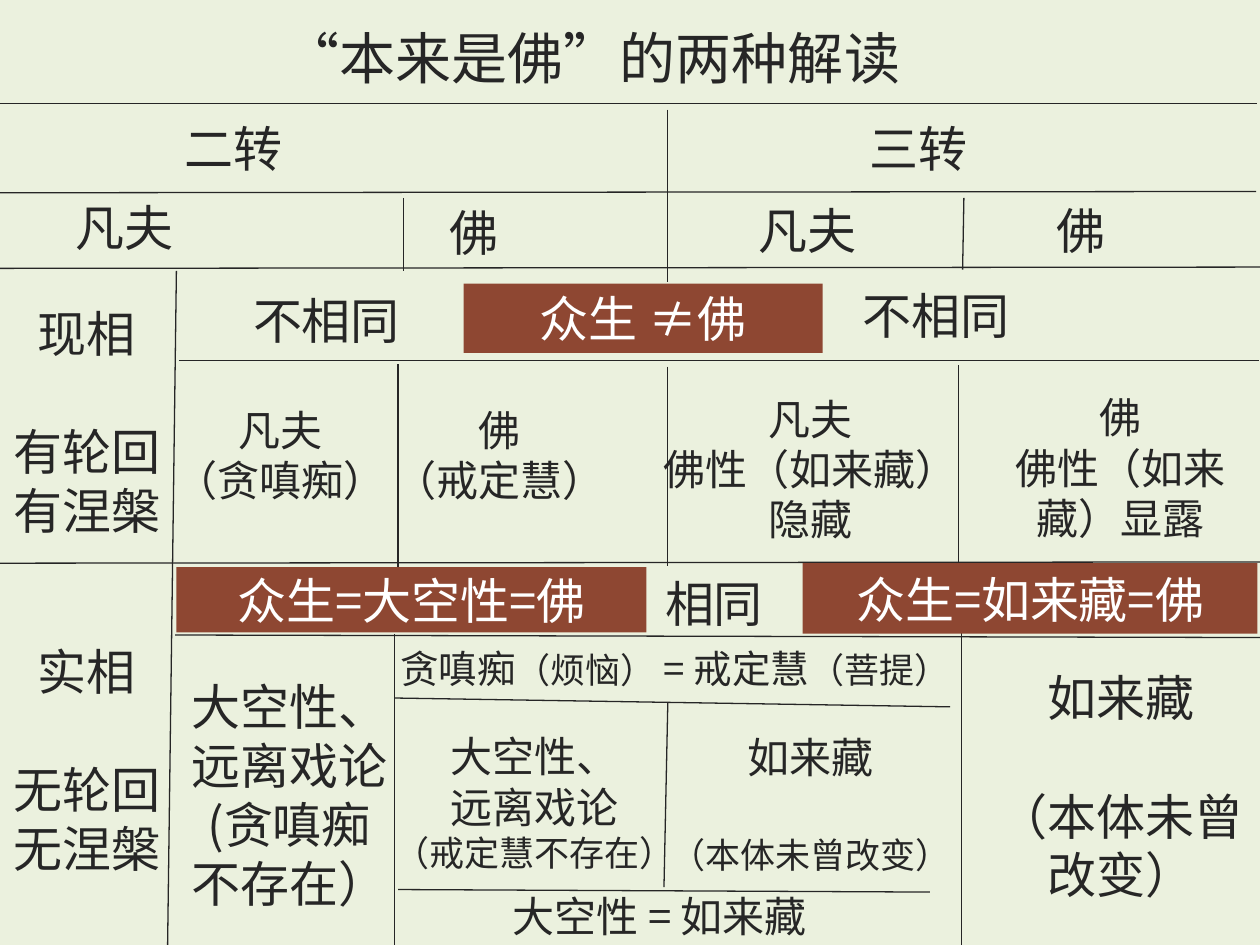
import pptx
import pptx.util
import pptx.dml.color
import pptx.enum.lang
import pptx.enum.shapes
import pptx.enum.text
import pptx.oxml
import pptx.oxml.ns

FONT = "Noto Sans CJK SC"
INK, RUST, PALE, WHITE = "262626", "8E4732", "EBF1DE", "FFFFFF"
BIG, MID, LOW = 28, 24, 20
ALIGN = pptx.enum.text.PP_ALIGN
ANCHOR = pptx.enum.text.MSO_ANCHOR

deck = pptx.Presentation()
deck.slide_width = pptx.util.Inches(10)
deck.slide_height = pptx.util.Inches(7.5)
# The grid has 100 columns and 75 rows; its cells are square
CELL = deck.slide_width / 100


def grid(*nums):
    return [pptx.util.Emu(round(n * CELL)) for n in nums]


def color(code):
    return pptx.dml.color.RGBColor.from_string(code)


def write(frame, *lines, size=BIG, ink=INK, align=ALIGN.CENTER, gap=0, wrap=True):
    """Each line is a string or a list of (text, size); gap goes above line two."""
    frame.word_wrap = wrap
    for i, line in enumerate(lines):
        para = frame.paragraphs[0] if i == 0 else frame.add_paragraph()
        para.alignment = align
        if i == 1 and gap:
            para.space_before = pptx.util.Pt(gap)
        for words, points in [(line, size)] if isinstance(line, str) else line:
            run = para.add_run()
            run.text = words
            font = run.font
            font.name, font.size = FONT, pptx.util.Pt(points)
            font.color.rgb = color(ink)
            font.language_id = pptx.enum.lang.MSO_LANGUAGE_ID.SIMPLIFIED_CHINESE
            east = pptx.oxml.parse_xml(
                f'<a:ea {pptx.oxml.ns.nsdecls("a")} typeface="{FONT}"/>')
            font.latin = None
            run._r.get_or_add_rPr().append(east)


def text(slide, box, at, *lines, **form):
    x, y, w, h = at
    note = slide.shapes.add_textbox(*grid(box[0] + x, box[1] + y, w, h))
    write(note.text_frame, *lines, **form)


def plate(slide, box, at, words):
    x, y, w, h = at
    rect = slide.shapes.add_shape(
        pptx.enum.shapes.MSO_SHAPE.RECTANGLE, *grid(box[0] + x, box[1] + y, w, h))
    rect.shadow.inherit = False
    rect.fill.solid()
    rect.fill.fore_color.rgb = color(RUST)
    rect.line.fill.background()
    rect.text_frame.vertical_anchor = ANCHOR.MIDDLE
    write(rect.text_frame, words, ink=WHITE, wrap=False)


def rules(slide, box, *ends):
    left, top = box
    for x1, y1, x2, y2 in ends:
        rule = slide.shapes.add_connector(
            pptx.enum.shapes.MSO_CONNECTOR.STRAIGHT,
            *grid(left + x1, top + y1, left + x2, top + y2))
        rule.line.color.rgb = color(INK)
        rule.line.width = pptx.util.Pt(0.75)
        rule._element.spPr.append(
            pptx.oxml.parse_xml(f'<a:effectLst {pptx.oxml.ns.nsdecls("a")}/>'))


def title(slide, box):
    head = slide.shapes.title
    head.left, head.top, head.width, head.height = grid(*box, 90, 12.5)
    head.text_frame.vertical_anchor = ANCHOR.MIDDLE
    write(head.text_frame, "“本来是佛”的两种解读", size=32)


def header(slide, box):
    rules(slide, box,
          (-0.2, 0, 99.8, 0), (-0.2, 7.1, 99.7, 7), (0, 13.1, 100, 13),
          (53, 0.5, 53, 14.2), (32, 7.5, 32, 13.3), (76.5, 7.5, 76.4, 13.2))
    for at, words in (
            ((13.7, 0.7, 23, 6), "二转"), ((68, 0.7, 22.9, 5.7), "三转"),
            ((5, 7, 15.5, 5.7), "凡夫"), ((34.7, 7.4, 5.9, 5.7), "佛"),
            ((59.2, 7.2, 14.4, 5.7), "凡夫"), ((82.9, 7.2, 6.9, 5.7), "佛")):
        text(slide, box, at, words, align=ALIGN.LEFT)


def seeming(slide, box):
    rules(slide, box,
          (14.2, 7.4, 99.9, 7.4), (31.6, 7.7, 31.6, 23.8),
          (53, 7.9, 53, 23.7), (76.1, 7.8, 76.1, 23.8))
    text(slide, box, (-0.4, 2.4, 14.6, 19.9), "现相", "有轮回有涅槃", gap=34)
    text(slide, box, (19.1, 1.4, 19.8, 5.7), "不相同", align=ALIGN.LEFT)
    text(slide, box, (67.5, 1, 17.8, 5.7), "不相同", align=ALIGN.LEFT)
    plate(slide, box, (36.8, 1.3, 28.5, 5.5), "众生 ≠佛")
    for at, who, what in (
            ((12.4, 10.4, 19.7, 9.1), "凡夫", "（贪嗔痴）"),
            ((29.3, 10.4, 20.7, 9.1), "佛", "（戒定慧）"),
            ((51.2, 9.5, 26.2, 13.1), "凡夫", "佛性（如来藏）隐藏"),
            ((77.8, 9.4, 22.3, 13.1), "佛", "佛性（如来藏）显露")):
        text(slide, box, at, who, what, size=MID)


def real(slide, box):
    rules(slide, box,
          (0, 0, 100, -0.1), (13.9, 5.7, 100.4, 5.9),
          (31.3, 5.6, 31.3, 30.3), (76.3, 2.7, 76.3, 30.5),
          (31.3, 10.7, 75.4, 11.4), (53, 11.1, 52.7, 25.7), (31.6, 25.9, 73.8, 26.1))
    text(slide, box, (-0.1, 5.7, 14, 19.9), "实相", "无轮回", "无涅槃", gap=34)
    text(slide, box, (51.8, 0.3, 14.5, 5.7), "相同", align=ALIGN.LEFT)
    plate(slide, box, (14, 0.3, 37.3, 5.2), "众生=大空性=佛")
    plate(slide, box, (63.7, 0, 36.1, 5.6), "众生=如来藏=佛")
    # Outer columns
    text(slide, box, (13.7, 8.5, 18.5, 19.9), "大空性、远离戏论", "(贪嗔痴不存在）")
    text(slide, box, (76.8, 7.8, 24.3, 19.9), "如来藏", "（本体未曾改变）", gap=34)
    # Middle columns
    text(slide, box, (30.8, 6, 57.3, 4.7),
         [("贪嗔痴", 22), ("（烦恼） ", LOW), ("= 戒定慧", 22), ("（菩提）", LOW)],
         align=ALIGN.LEFT)
    text(slide, box, (29.5, 12.8, 25.9, 12.5), "大空性、", "远离戏论",
         [("（戒定慧不存在）", LOW)], size=MID)
    text(slide, box, (51, 12.9, 26.7, 12.5), "如来藏",
         [("（本体未曾改变）", LOW)], size=MID, gap=29)
    text(slide, box, (39.7, 25.5, 29, 5), "大空性 = 如来藏",
         size=MID, align=ALIGN.LEFT)


def main():
    slide = deck.slides.add_slide(deck.slide_layouts[5])
    slide.background.fill.solid()
    slide.background.fill.fore_color.rgb = color(PALE)
    title(slide, (2, -1.7))
    header(slide, (0, 8.2))
    rules(slide, (0, 0), (14, 21.5, 13.3, 75.2))  # row label edge
    seeming(slide, (0, 21.2))
    real(slide, (0, 44.7))
    deck.save("out.pptx")


if __name__ == "__main__":
    main()
